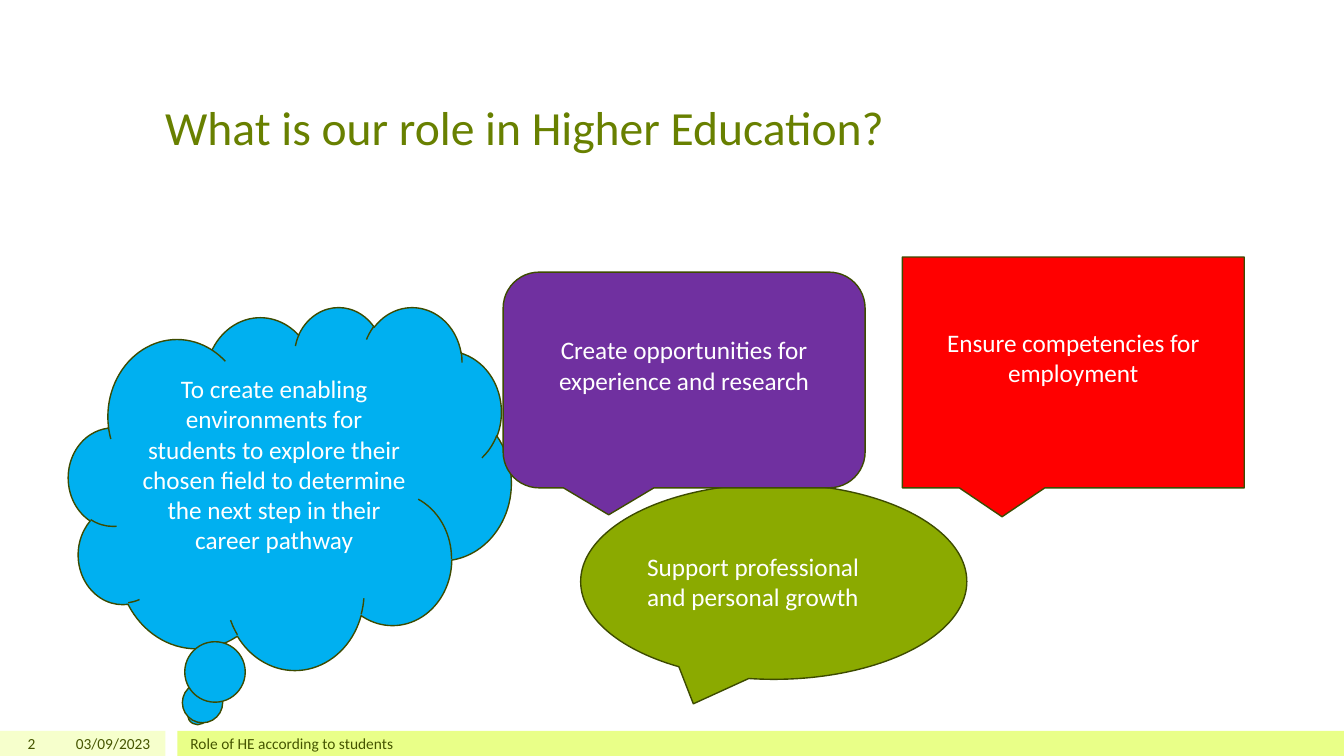
from dataclasses import dataclass

import pptx
import pptx.dml.color
import pptx.enum.shapes
import pptx.enum.text
import pptx.util

SHAPE = pptx.enum.shapes.MSO_SHAPE
ALIGN = pptx.enum.text.PP_ALIGN
ANCHOR = pptx.enum.text.MSO_ANCHOR

EMU_PER_PX = 9144  # 100 px to the inch
SLIDE_WIDTH, SLIDE_HEIGHT = 1333, 750
FOOTER_TOP, FOOTER_HEIGHT = 725, 25
FONT = "Calibri"
OUTLINE = "3D4B00"
FOOTER_INK = "455500"


@dataclass(frozen=True)
class Box:
    left: int
    top: int
    width: int
    height: int


@dataclass(frozen=True)
class Callout:
    kind: int
    box: Box
    fill: str
    text: str
    align: int = ALIGN.CENTER
    right_inset: int = 10
    bottom_inset: int = 35  # lifts the text above the middle


@dataclass(frozen=True)
class FooterItem:
    left: int
    width: int
    text: str
    align: int


FOOTER_BANDS = [
    (Box(0, FOOTER_TOP, 164, FOOTER_HEIGHT), "F6FFCC"),
    (Box(176, FOOTER_TOP, SLIDE_WIDTH - 176, FOOTER_HEIGHT), "E9FF88"),
]
FOOTER_ITEMS = [
    FooterItem(0, 45, "2", ALIGN.RIGHT),
    FooterItem(179, 1000, "Role of HE according to students", ALIGN.LEFT),
    FooterItem(50, 109, "03/09/2023", ALIGN.RIGHT),
]
CALLOUTS = [
    Callout(SHAPE.OVAL_CALLOUT, Box(576, 480, 383, 194), "8BAA00",
            "Support professional and personal growth",
            align=ALIGN.LEFT, right_inset=20, bottom_inset=5),
    Callout(SHAPE.CLOUD_CALLOUT, Box(68, 304, 439, 360), "00B0F0",
            "To create enabling environments for students to explore their "
            "chosen field to determine the next step in their career pathway"),
    Callout(SHAPE.RECTANGULAR_CALLOUT, Box(895, 255, 339, 229), "FF0000",
            "Ensure competencies for employment"),
    Callout(SHAPE.ROUNDED_RECTANGULAR_CALLOUT, Box(499, 270, 359, 214), "7030A0",
            "Create opportunities for experience and research"),
]


def px(length: int) -> pptx.util.Emu:
    return pptx.util.Emu(length * EMU_PER_PX)


def color(value: str) -> pptx.dml.color.RGBColor:
    return pptx.dml.color.RGBColor.from_string(value)


def place(box: Box) -> tuple:
    return px(box.left), px(box.top), px(box.width), px(box.height)


def write(shape, text: str, size: int, ink: str, align: int, anchor: int,
          right_inset: int = 10, bottom_inset: int = 5) -> None:
    frame = shape.text_frame
    frame.text = text
    frame.word_wrap = True
    frame.vertical_anchor = anchor
    frame.margin_left, frame.margin_top = px(10), px(5)
    frame.margin_right, frame.margin_bottom = px(right_inset), px(bottom_inset)
    paragraph = frame.paragraphs[0]
    paragraph.alignment = align
    font = paragraph.runs[0].font
    font.name = FONT
    font.size = pptx.util.Pt(size)
    font.color.rgb = color(ink)


def add_filled(slide, kind: int, box: Box, fill: str):
    shape = slide.shapes.add_shape(kind, *place(box))
    shape.shadow.inherit = False
    shape.fill.solid()
    shape.fill.fore_color.rgb = color(fill)
    return shape


def add_label(slide, box: Box, text: str, size: int, ink: str,
              align: int, anchor: int) -> None:
    label = slide.shapes.add_textbox(*place(box))
    write(label, text, size, ink, align, anchor)


def add_callout(slide, callout: Callout) -> None:
    bubble = add_filled(slide, callout.kind, callout.box, callout.fill)
    bubble.line.color.rgb = color(OUTLINE)
    bubble.line.width = pptx.util.Pt(1)
    write(bubble, callout.text, 18, "FFFFFF", callout.align, ANCHOR.MIDDLE,
          callout.right_inset, callout.bottom_inset)


def main() -> None:
    deck = pptx.Presentation()
    deck.slide_width, deck.slide_height = px(SLIDE_WIDTH), px(SLIDE_HEIGHT)
    slide = deck.slides.add_slide(deck.slide_layouts[6])

    # Footer bands
    for box, fill in FOOTER_BANDS:
        band = add_filled(slide, SHAPE.RECTANGLE, box, fill)
        band.line.fill.background()

    # Title
    add_label(slide, Box(154, 30, 1025, 129), "What is our role in Higher Education?",
              34, "688000", ALIGN.LEFT, ANCHOR.BOTTOM)

    # Slide number, footer and date
    for item in FOOTER_ITEMS:
        add_label(slide, Box(item.left, FOOTER_TOP, item.width, FOOTER_HEIGHT),
                  item.text, 11, FOOTER_INK, item.align, ANCHOR.MIDDLE)

    # Callouts, from back to front
    for callout in CALLOUTS:
        add_callout(slide, callout)

    deck.save("out.pptx")


if __name__ == "__main__":
    main()
